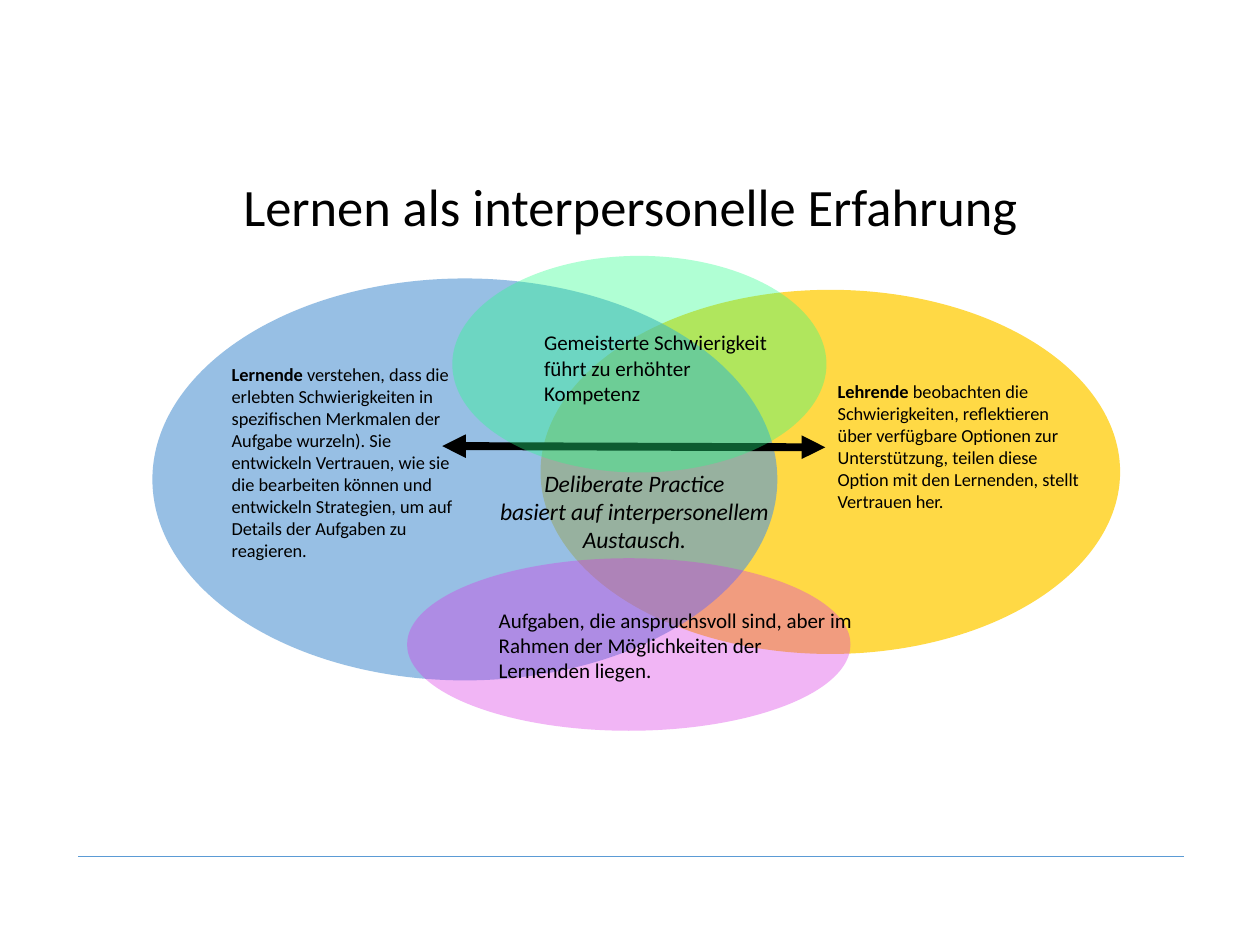
from typing import NamedTuple

from lxml.etree import SubElement
from pptx import Presentation
from pptx.dml.color import RGBColor
from pptx.enum.shapes import MSO_CONNECTOR as Connector, MSO_SHAPE as Shape
from pptx.enum.text import MSO_ANCHOR as Anchor, MSO_AUTO_SIZE as AutoSize, PP_ALIGN as Align
from pptx.oxml.ns import qn
from pptx.util import Pt

FONT = "Calibri"
COLORS = {
    "text": "000000",
    "rule": "5B9BD5",
    "teachers": "FFCC00",
    "learners": "5B9BD5",
    "mastery": "25FF88",
    "tasks": "D932E6",
}


class Frame(NamedTuple):
    left: float
    top: float
    width: float
    height: float

    def lengths(self) -> list:
        return [Pt(value) for value in self]


class Oval(NamedTuple):
    frame: Frame
    color: str
    opacity: int


class Note(NamedTuple):
    frame: Frame
    size: float
    text: str
    lead: str = ""
    italic: bool = False
    align: Align = Align.LEFT


TITLE_FRAME = Frame(131.8, 95.8, 476.6, 64.1)
TEACHERS = Oval(Frame(308.9, 165.6, 331.2, 208.1), "teachers", 73)
LEARNERS = Oval(Frame(87.1, 159.1, 357.1, 229.7), "learners", 63)
MASTERY = Oval(Frame(258.5, 146.2, 213.8, 123.8), "mastery", 36)
TASKS = Oval(Frame(232.6, 319, 253.4, 98.6), "tasks", 36)

TEACHERS_NOTE = Note(
    Frame(471.6, 213.8, 157, 83.5), 10.5,
    " beobachten die Schwierigkeiten, reflektieren über verfügbare Optionen zur "
    "Unterstützung, teilen diese Option mit den Lernenden, stellt Vertrauen her.",
    lead="Lehrende")
LEARNERS_NOTE = Note(
    Frame(125.3, 203.8, 144.7, 121.7), 10.5,
    " verstehen, dass die erlebten Schwierigkeiten in spezifischen Merkmalen der "
    "Aufgabe wurzeln). Sie entwickeln Vertrauen, wie sie die bearbeiten können und "
    "entwickeln Strategien, um auf Details der Aufgaben zu reagieren.",
    lead="Lernende")
MASTERY_NOTE = Note(
    Frame(303.8, 185, 154.8, 36), 12,
    "Gemeisterte Schwierigkeit führt zu erhöhter Kompetenz")
PRACTICE_NOTE = Note(
    Frame(270.7, 264.2, 183.6, 56.2), 13.5,
    "Deliberate Practice\vbasiert auf interpersonellem Austausch.",
    italic=True, align=Align.CENTER)
TASKS_NOTE = Note(
    Frame(277.9, 343.4, 216.8, 51.1), 12,
    "Aufgaben, die anspruchsvoll sind, aber im Rahmen der Möglichkeiten der "
    "Lernenden liegen.")


def rgb(name: str) -> RGBColor:
    return RGBColor.from_string(COLORS[name])


def style_paragraph(para, size: float, italic: bool = False) -> None:
    font = para.font
    font.name, font.size, font.italic = FONT, Pt(size), italic
    font.color.rgb = rgb("text")


def set_title(page, text: str) -> None:
    title = page.shapes.title
    title.left, title.top, title.width, title.height = TITLE_FRAME.lengths()
    frame = title.text_frame
    frame.text = text
    frame.vertical_anchor = Anchor.MIDDLE
    frame.margin_bottom = Pt(20)
    para = frame.paragraphs[0]
    para.alignment = Align.LEFT
    para.line_spacing = 0.9
    style_paragraph(para, 30)


def draw_oval(page, oval: Oval) -> None:
    shape = page.shapes.add_shape(Shape.OVAL, *oval.frame.lengths())
    shape.shadow.inherit = False
    shape.line.fill.background()
    shape.fill.solid()
    shape.fill.fore_color.rgb = rgb(oval.color)
    color = shape.fill._xPr.find(f"{qn('a:solidFill')}/{qn('a:srgbClr')}")
    SubElement(color, qn("a:alpha"), val=str(oval.opacity * 1000))


def draw_note(page, note: Note) -> None:
    box = page.shapes.add_textbox(*note.frame.lengths())
    frame = box.text_frame
    frame.word_wrap = True
    frame.auto_size = AutoSize.SHAPE_TO_FIT_TEXT
    para = frame.paragraphs[0]
    para.alignment = note.align
    if note.lead:
        span = para.add_run()
        span.text = note.lead
        span.font.bold = True
        para.add_run().text = note.text
    else:
        para.text = note.text
    style_paragraph(para, note.size, note.italic)


def draw_line(page, start: tuple, end: tuple, color: str, width: float,
              arrows: bool = False) -> None:
    line = page.shapes.add_connector(
        Connector.STRAIGHT, *(Pt(value) for value in (*start, *end)))
    line.line.color.rgb = rgb(color)
    line.line.width = Pt(width)
    if arrows:
        outline = line.line._get_or_add_ln()
        for tip in ("a:headEnd", "a:tailEnd"):
            SubElement(outline, qn(tip), type="triangle")
    SubElement(line._element.spPr, qn("a:effectLst"))


def main() -> None:
    deck = Presentation()
    deck.slide_width, deck.slide_height = Pt(720), Pt(540)
    page = deck.slides.add_slide(deck.slide_layouts[5])

    set_title(page, "Lernen als interpersonelle Erfahrung")
    draw_line(page, (44.6, 489.6), (676.8, 489.6), "rule", 0.5)
    draw_oval(page, TEACHERS)
    draw_note(page, TEACHERS_NOTE)
    draw_oval(page, LEARNERS)
    draw_note(page, LEARNERS_NOTE)
    draw_line(page, (471.6, 255.6), (252.7, 254.9), "text", 4.5, arrows=True)
    draw_oval(page, MASTERY)
    draw_note(page, MASTERY_NOTE)
    draw_note(page, PRACTICE_NOTE)
    draw_oval(page, TASKS)
    draw_note(page, TASKS_NOTE)

    deck.save("out.pptx")


if __name__ == "__main__":
    main()
